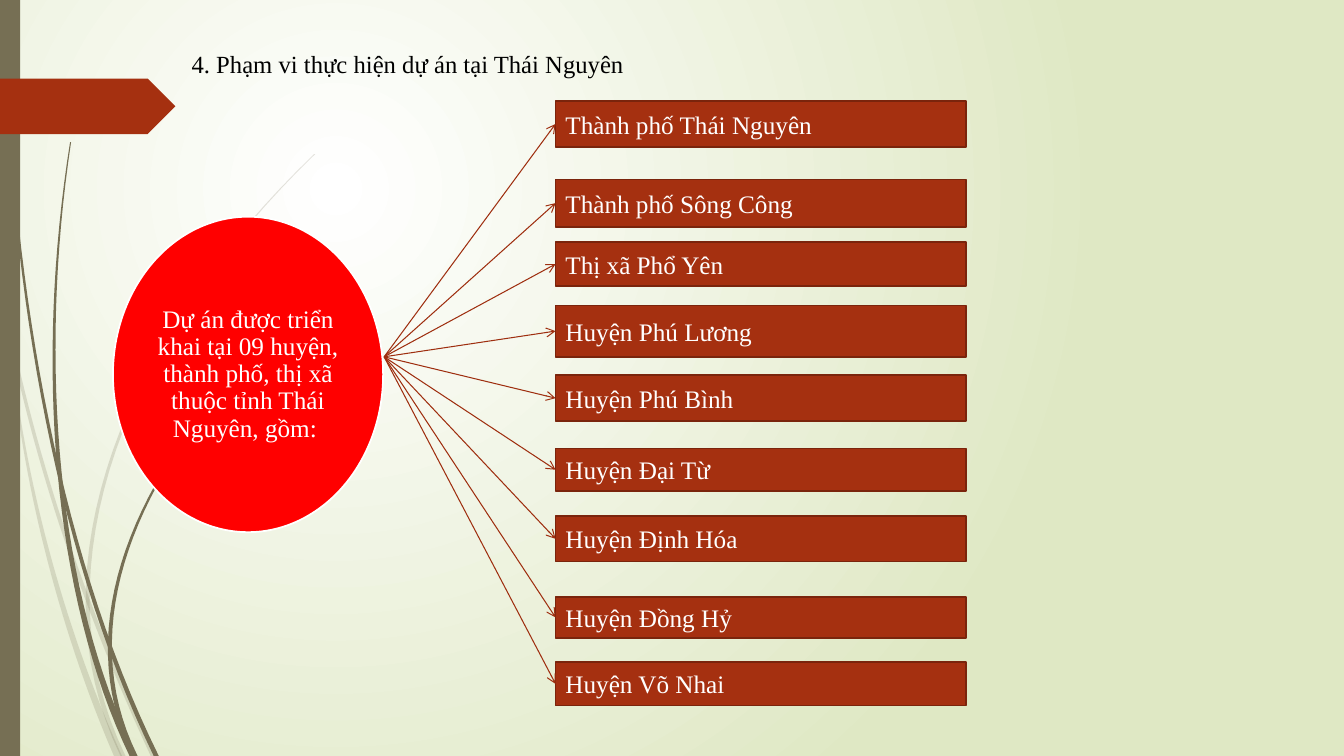
"""Build the slide on the project's districts in Thái Nguyên."""
from lxml import etree
from pptx import Presentation
from pptx.dml.color import RGBColor
from pptx.enum import shapes, text
from pptx.oxml.ns import qn
from pptx.util import Inches, Pt

FONT = "Times New Roman"
OLIVE, RUST, RUST_EDGE, ARROW = "766F54", "A53010", "7A240C", "9E2E0F"
RED, WHITE, BLACK, PALE_GREEN = "FF0000", "FFFFFF", "000000", "DFE8C4"


def paint(shape, fill, edge=None):
    shape.shadow.inherit = False
    shape.fill.solid()
    shape.fill.fore_color.rgb = RGBColor.from_string(fill)
    if edge:
        shape.line.color.rgb = RGBColor.from_string(edge)
        shape.line.width = Pt(1.25)
    else:
        shape.line.fill.background()


def write(shape, words, size, color, align, anchor):
    frame = shape.text_frame
    frame.text = words
    frame.word_wrap = True
    frame.auto_size = text.MSO_AUTO_SIZE.NONE
    frame.vertical_anchor = anchor
    paragraph = frame.paragraphs[0]
    paragraph.alignment = align
    paragraph.font.name = FONT
    paragraph.font.size = Pt(size)
    paragraph.font.color.rgb = RGBColor.from_string(color)
    return frame


prs = Presentation()
prs.slide_width, prs.slide_height = Inches(13.33), Inches(7.5)
slide = prs.slides.add_slide(prs.slide_layouts[5])

backdrop = slide.background.fill
backdrop.gradient()
for stop, (position, color) in zip(backdrop.gradient_stops, [(0, WHITE), (1, PALE_GREEN)]):
    stop.position = position
    stop.color.rgb = RGBColor.from_string(color)
linear = slide.element.find(".//" + qn("a:lin"))
radial = etree.Element(qn("a:path"), path="circle")
etree.SubElement(radial, qn("a:fillToRect"), l="50000", t="50000", r="100000", b="100000")
linear.getparent().replace(linear, radial)

FROND_STEPS = 32
fronds = [
    {"bezier": [(0.02, 2.9), (0.3, 4.45), (0.82, 6), (1.52, 7.5)],
     "tip": 0.03, "root": 0.05, "opacity": 20},
    {"bezier": [(0.11, 3.5), (0.25, 4.9), (0.66, 6.35), (1.17, 7.5)],
     "tip": 0.01, "root": 0.08, "opacity": 20},
    {"bezier": [(3.12, 1.53), (1.28, 3.3), (0.3, 5.6), (1.22, 7.5)],
     "tip": 0.01, "root": 0.05, "opacity": 20},
    {"bezier": [(0.04, 0), (0.08, 2.6), (0.52, 5.4), (1.55, 7.5)],
     "tip": 0.01, "root": 0.05, "opacity": 100},
    {"bezier": [(0.7, 1.41), (0.36, 3.6), (0.54, 5.9), (1.32, 7.5)],
     "tip": 0.01, "root": 0.07, "opacity": 100},
    {"bezier": [(2.6, 3.44), (1.35, 4.7), (0.7, 6.2), (1.34, 7.5)],
     "tip": 0.01, "root": 0.05, "opacity": 100},
]
for frond in fronds:
    left_edge, right_edge = [], []
    for step in range(FROND_STEPS + 1):
        t = step / FROND_STEPS
        weights = [(1 - t) ** 3, 3 * t * (1 - t) ** 2, 3 * t ** 2 * (1 - t), t ** 3]
        x, y = (sum(w * c for w, c in zip(weights, axis)) for axis in zip(*frond["bezier"]))
        half_width = (frond["tip"] + (frond["root"] - frond["tip"]) * t) / 2
        left_edge.append((Inches(x - half_width), Inches(y)))
        right_edge.append((Inches(x + half_width), Inches(y)))
    outline = left_edge + right_edge[::-1]
    builder = slide.shapes.build_freeform(*outline[0])
    builder.add_line_segments(outline[1:], close=True)
    blade = builder.convert_to_shape()
    paint(blade, OLIVE)
    tint = blade.element.spPr.find(".//" + qn("a:srgbClr"))
    etree.SubElement(tint, qn("a:alpha"), val=str(frond["opacity"] * 1000))

side_bar = slide.shapes.add_shape(shapes.MSO_SHAPE.RECTANGLE, 0, 0, Inches(0.2), Inches(7.5))
paint(side_bar, OLIVE)
banner = slide.shapes.add_shape(shapes.MSO_SHAPE.PENTAGON, 0, Inches(0.78),
                                Inches(1.74), Inches(0.55))
paint(banner, RUST)

heading = slide.shapes.title
heading.left, heading.top = Inches(1.8), Inches(0.43)
heading.width, heading.height = Inches(6.73), Inches(0.54)
write(heading, "4. Phạm vi thực hiện dự án tại Thái Nguyên", 17.6, BLACK,
      text.PP_ALIGN.LEFT, text.MSO_ANCHOR.TOP)

scope = slide.shapes.add_shape(shapes.MSO_SHAPE.OVAL, Inches(1.12), Inches(2.15),
                               Inches(2.68), Inches(3.13))
paint(scope, RED, WHITE)
scope_frame = write(
    scope, "Dự án được triển khai tại 09 huyện, thành phố, thị xã thuộc tỉnh Thái Nguyên, gồm: ",
    18, WHITE, text.PP_ALIGN.CENTER, text.MSO_ANCHOR.MIDDLE)
scope_frame.margin_left = scope_frame.margin_right = Inches(0.03)
scope_frame.margin_top = scope_frame.margin_bottom = Inches(0.03)
scope_frame.paragraphs[0].line_spacing = 0.9

DISTRICT_LEFT, DISTRICT_WIDTH = 5.51, 4.07
FAN_X, FAN_Y = 3.81, 3.54
districts = [
    ("Thành phố Thái Nguyên", 1, 0.46),
    ("Thành phố Sông Công", 1.78, 0.47),
    ("Thị xã Phổ Yên", 2.4, 0.44),
    ("Huyện Phú Lương", 3.03, 0.51),
    ("Huyện Phú Bình", 3.72, 0.46),
    ("Huyện Đại Từ", 4.45, 0.42),
    ("Huyện Định Hóa", 5.12, 0.45),
    ("Huyện Đồng Hỷ", 5.92, 0.41),
    ("Huyện Võ Nhai", 6.57, 0.43),
]
for name, top, height in districts:
    district = slide.shapes.add_shape(shapes.MSO_SHAPE.RECTANGLE, Inches(DISTRICT_LEFT),
                                      Inches(top), Inches(DISTRICT_WIDTH), Inches(height))
    paint(district, RUST, RUST_EDGE)
    write(district, name, 18, WHITE, text.PP_ALIGN.LEFT, text.MSO_ANCHOR.MIDDLE)

    arrow = slide.shapes.add_connector(shapes.MSO_CONNECTOR.STRAIGHT, Inches(FAN_X), Inches(FAN_Y),
                                       Inches(DISTRICT_LEFT), Inches(top + height / 2))
    arrow.end_connect(district, 1)
    arrow.line.color.rgb = RGBColor.from_string(ARROW)
    arrow.line.width = Pt(0.75)
    arrow_line = arrow.element.spPr.find(qn("a:ln"))
    etree.SubElement(arrow_line, qn("a:tailEnd"), type="arrow")
    etree.SubElement(arrow.element.spPr, qn("a:effectLst"))

prs.save("out.pptx")
